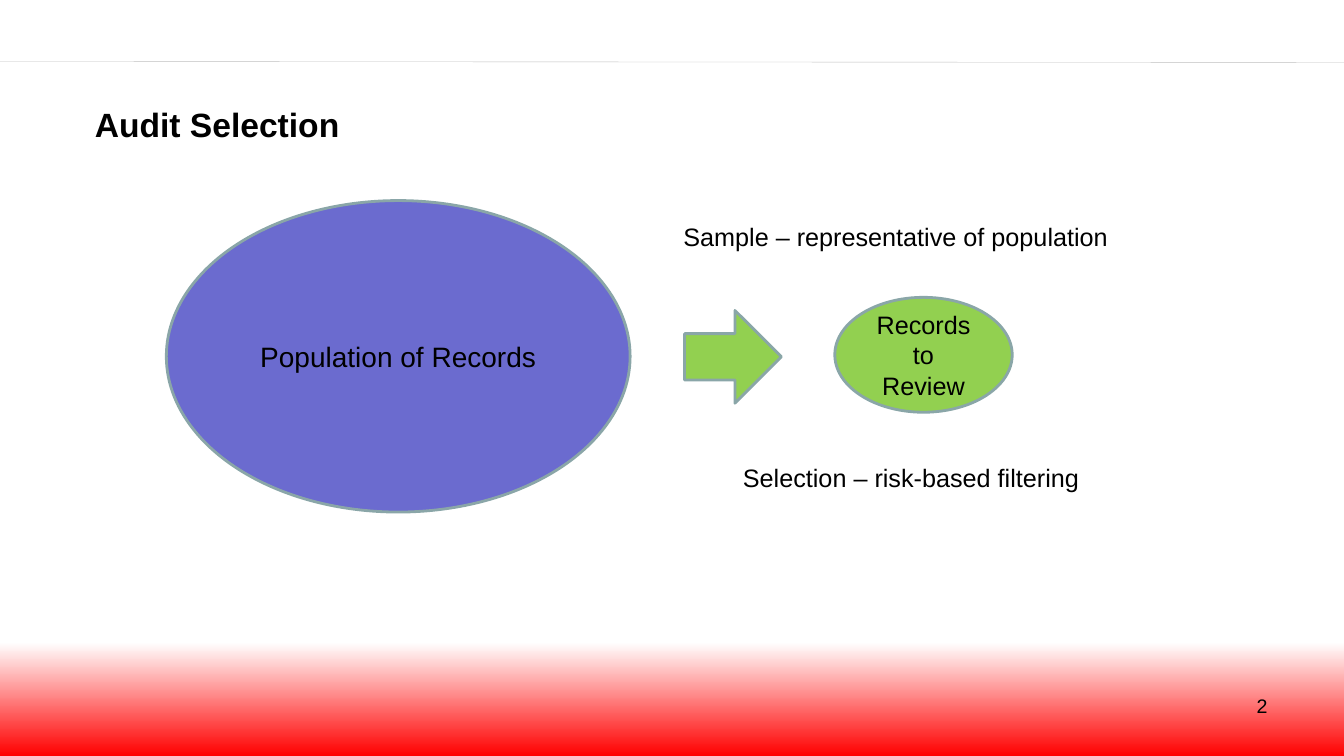
from copy import deepcopy
from dataclasses import dataclass
from typing import Optional

from lxml import etree
from pptx import Presentation
from pptx import util as u
from pptx.dml.color import RGBColor
from pptx.enum import shapes, text
from pptx.oxml.ns import qn
from pptx.slide import Slide
from pptx.text.text import TextFrame

EMU_PER_PX = 9144


@dataclass(frozen=True)
class Theme:
    font: str = "Arial"
    ink: str = "000000"
    population: str = "6B6BCF"
    review: str = "92D050"
    outline: str = "8AA6A8"
    rule: str = "BFBFBF"
    backdrop: tuple = ((0, "FF0000"), (0.15, "FFFFFF"), (1, "FFFFFF"))
    title_size: int = 24
    population_size: int = 20
    label_size: int = 18
    number_size: int = 14
    outline_width: int = 2
    rule_width: float = 0.25


@dataclass(frozen=True)
class Box:
    left: int
    top: int
    width: int
    height: int

    def emu(self) -> tuple:
        return tuple(px(v) for v in (self.left, self.top, self.width, self.height))


@dataclass(frozen=True)
class Figure:
    preset: shapes.MSO_SHAPE
    box: Box
    fill: str
    wording: Optional[str] = None
    size: int = 18


@dataclass(frozen=True)
class Label:
    wording: str
    box: Box
    size: int
    align: text.PP_ALIGN = text.PP_ALIGN.LEFT


THEME = Theme()
OVAL = shapes.MSO_SHAPE.OVAL

FIGURES = (
    Figure(OVAL, Box(828, 295, 176, 114), THEME.review, "Records to Review", THEME.label_size),
    Figure(OVAL, Box(165, 199, 460, 309), THEME.population, "Population of Records",
           THEME.population_size),
    Figure(shapes.MSO_SHAPE.RIGHT_ARROW, Box(679, 308, 96, 92), THEME.review),
)
LABELS = (
    Label("Sample – representative of population", Box(668, 215, 460, 40), THEME.label_size),
    Label("Selection – risk-based filtering", Box(727, 454, 460, 40), THEME.label_size),
    Label("2", Box(956, 683, 311, 52), THEME.number_size, text.PP_ALIGN.RIGHT),
)


def px(length: int) -> u.Emu:
    return u.Emu(length * EMU_PER_PX)


def rgb(colour: str) -> RGBColor:
    return RGBColor.from_string(colour)


def write(frame: TextFrame, wording: str, size: int, align: text.PP_ALIGN,
          bold: bool = False) -> None:
    frame.word_wrap = True
    frame.text = wording
    paragraph = frame.paragraphs[0]
    paragraph.alignment = align
    font = paragraph.font
    font.name = THEME.font
    font.size = u.Pt(size)
    font.bold = bold
    font.color.rgb = rgb(THEME.ink)


def paint_backdrop(slide: Slide) -> None:
    fill = slide.background.fill
    fill.gradient()
    fill.gradient_angle = 90
    stop_list = next(slide.element.iter(qn("a:gsLst")))
    stop_list.append(deepcopy(stop_list[-1]))
    for stop, (position, colour) in zip(fill.gradient_stops, THEME.backdrop):
        stop.position = position
        stop.color.rgb = rgb(colour)


def draw_rule(slide: Slide) -> None:
    rule = slide.shapes.add_connector(
        shapes.MSO_CONNECTOR.STRAIGHT, px(0), px(61), px(1333), px(62))
    rule.line.color.rgb = rgb(THEME.rule)
    rule.line.width = u.Pt(THEME.rule_width)
    effects = etree.SubElement(rule._element.spPr, qn("a:effectLst"))
    shadow = etree.SubElement(effects, qn("a:outerShdw"), blurRad=str(u.Pt(3.1)),
                              dist=str(u.Pt(1.6)), dir="5400000", rotWithShape="0")
    tint = etree.SubElement(shadow, qn("a:srgbClr"), val=THEME.ink)
    etree.SubElement(tint, qn("a:alpha"), val="38000")


def place_title(slide: Slide, wording: str, box: Box) -> None:
    title = slide.shapes.title
    title.left, title.top, title.width, title.height = box.emu()
    frame = title.text_frame
    frame.auto_size = text.MSO_AUTO_SIZE.NONE
    frame.vertical_anchor = text.MSO_ANCHOR.MIDDLE
    write(frame, wording, THEME.title_size, text.PP_ALIGN.LEFT, bold=True)


def draw_figure(slide: Slide, figure: Figure) -> None:
    shape = slide.shapes.add_shape(figure.preset, *figure.box.emu())
    shape.shadow.inherit = False
    shape.fill.solid()
    shape.fill.fore_color.rgb = rgb(figure.fill)
    shape.line.color.rgb = rgb(THEME.outline)
    shape.line.width = u.Pt(THEME.outline_width)
    if figure.wording:
        shape.text_frame.vertical_anchor = text.MSO_ANCHOR.MIDDLE
        write(shape.text_frame, figure.wording, figure.size, text.PP_ALIGN.CENTER)


def draw_label(slide: Slide, label: Label) -> None:
    frame = slide.shapes.add_textbox(*label.box.emu()).text_frame
    write(frame, label.wording, label.size, label.align)


def main() -> None:
    deck = Presentation()
    deck.slide_width, deck.slide_height = px(1333), px(750)
    slide = deck.slides.add_slide(deck.slide_layouts.get_by_name("Title Only"))
    paint_backdrop(slide)
    draw_rule(slide)
    place_title(slide, "Audit Selection", Box(84, 79, 558, 88))
    for figure in FIGURES:
        draw_figure(slide, figure)
    for label in LABELS:
        draw_label(slide, label)
    deck.save("out.pptx")


if __name__ == "__main__":
    main()
